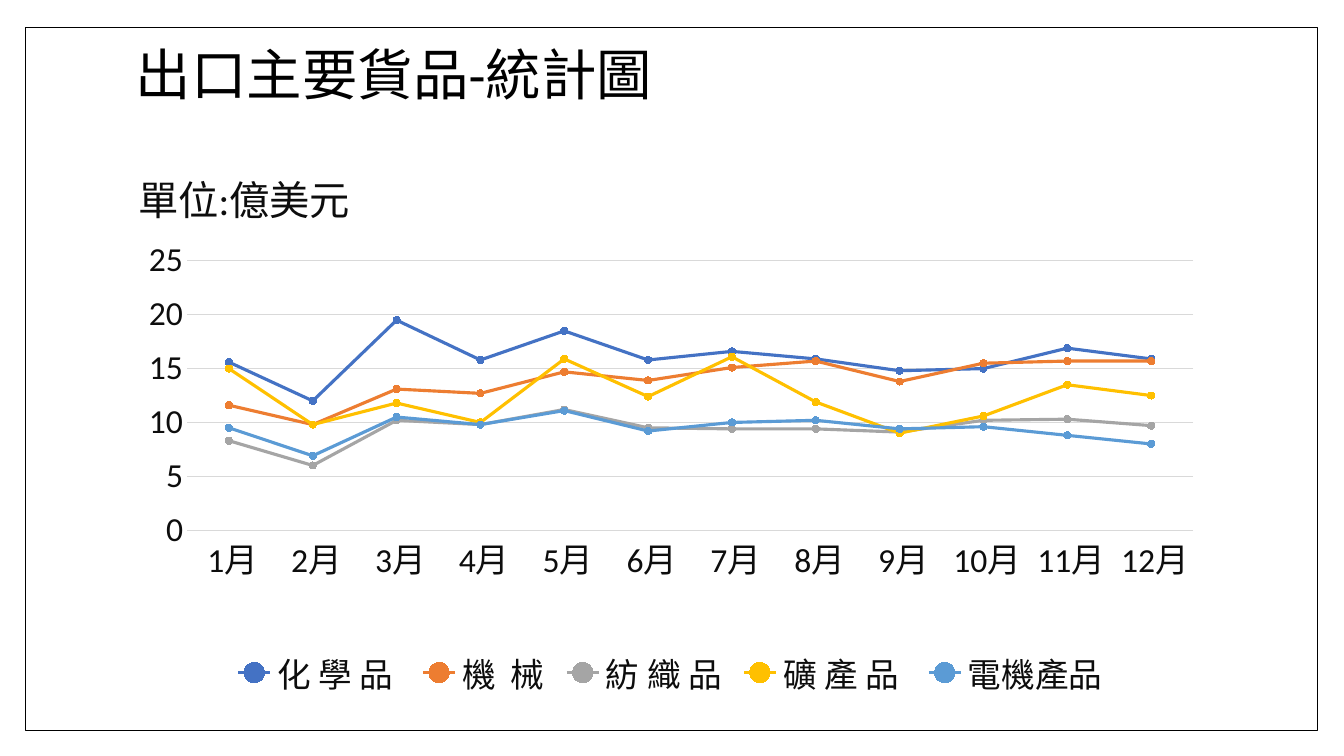
from lxml.etree import SubElement
from pptx import Presentation
from pptx.chart.data import CategoryChartData as Data
from pptx.dml.color import RGBColor
from pptx.enum.chart import (XL_CHART_TYPE as Kind, XL_LEGEND_POSITION as Place,
                             XL_MARKER_STYLE as Mark, XL_TICK_MARK as Tick)
from pptx.enum.shapes import MSO_SHAPE as Shape
from pptx.enum.text import MSO_ANCHOR as Anchor
from pptx.oxml.ns import qn
from pptx.util import Inches, Pt

BLACK = RGBColor(0x00, 0x00, 0x00)
WHITE = RGBColor(0xFF, 0xFF, 0xFF)
INK = RGBColor(0x0D, 0x0D, 0x0D)
GRID = RGBColor(0xD9, 0xD9, 0xD9)
BLUE = RGBColor(0x44, 0x72, 0xC4)
ORANGE = RGBColor(0xED, 0x7D, 0x31)
GRAY = RGBColor(0xA5, 0xA5, 0xA5)
GOLD = RGBColor(0xFF, 0xC0, 0x00)
SKY = RGBColor(0x5B, 0x9B, 0xD5)

MONTHS = [f" {month}月" for month in range(1, 13)]
GOODS = [
    ("化 學 品 ", BLUE, [15.6, 12, 19.5, 15.8, 18.5, 15.8, 16.6, 15.9, 14.8, 15, 16.9, 15.9]),
    ("機  械", ORANGE, [11.6, 9.8, 13.1, 12.7, 14.7, 13.9, 15.1, 15.7, 13.8, 15.5, 15.7, 15.7]),
    ("紡 織 品", GRAY, [8.3, 6, 10.2, 9.8, 11.2, 9.5, 9.4, 9.4, 9.1, 10.2, 10.3, 9.7]),
    ("礦 產 品 ", GOLD, [15, 9.8, 11.8, 10, 15.9, 12.4, 16.1, 11.9, 9, 10.6, 13.5, 12.5]),
    ("電機產品", SKY, [9.5, 6.9, 10.5, 9.8, 11.1, 9.2, 10, 10.2, 9.4, 9.6, 8.8, 8]),
]


def arrange(node, index, **values):
    """Give a chart part a manual layout, in fractions of the chart."""
    for old in node.findall(qn("c:layout")):
        node.remove(old)
    layout = SubElement(node, qn("c:layout"))
    node.insert(index, layout)
    manual = SubElement(layout, qn("c:manualLayout"))
    for name, value in values.items():
        SubElement(manual, qn(f"c:{name}")).set("val", str(value))


class Board:
    face = "Calibri"

    def __init__(self, slide):
        self.slide = slide

    def style(self, font, size, color=INK):
        for name, value in {"name": self.face, "size": Pt(size), "bold": False}.items():
            setattr(font, name, value)
        font.color.rgb = color

    def stroke(self, line, color, width):
        line.color.rgb = color
        line.width = Pt(width)

    def frame(self, *box):
        rect = self.slide.shapes.add_shape(Shape.RECTANGLE, *map(Inches, box))
        rect.shadow.inherit = False
        rect.fill.solid()
        rect.fill.fore_color.rgb = WHITE
        self.stroke(rect.line, BLACK, 1)

    def text(self, words, size, *box):
        frame = self.slide.shapes.add_textbox(*map(Inches, box)).text_frame
        frame.word_wrap = True
        frame.vertical_anchor = Anchor.MIDDLE
        para = frame.paragraphs[0]
        para.line_spacing = 0.9
        run = para.add_run()
        run.text = words
        self.style(run.font, size, BLACK)

    def chart(self, title, months, goods, *box):
        data = Data()
        data.categories = months
        for name, _, values in goods:
            data.add_series(name, values)
        chart = self.slide.shapes.add_chart(
            Kind.LINE_MARKERS, *map(Inches, box), data).chart
        self.style(chart.font, 24)
        self.head(chart, title)
        self.axes(chart)
        self.lines(chart.plots[0], goods)
        chart.has_legend = True
        chart.legend.position = Place.BOTTOM
        chart.legend.include_in_layout = False
        self.style(chart.legend.font, 24)
        arrange(chart._chartSpace.chart.plotArea, 0, layoutTarget="inner",
                xMode="edge", yMode="edge", x=0.056, y=0.206, w=0.924, h=0.483)

    def head(self, chart, words):
        chart.has_title = True
        title = chart.chart_title
        run = title.text_frame.paragraphs[0].add_run()
        run.text = words
        self.style(run.font, 28.8)
        title.include_in_layout = False
        arrange(title._element, 1, xMode="edge", yMode="edge", x=0.005, y=0.02)

    def axes(self, chart):
        for axis in (chart.category_axis, chart.value_axis):
            axis.major_tick_mark = axis.minor_tick_mark = Tick.NONE
            self.style(axis.tick_labels.font, 24)
        self.stroke(chart.category_axis.format.line, GRID, 0.75)
        axis = chart.value_axis
        for name, value in {"minimum_scale": 0, "maximum_scale": 25, "major_unit": 5}.items():
            setattr(axis, name, value)
        axis.format.line.fill.background()
        self.stroke(axis.major_gridlines.format.line, GRID, 0.75)

    def lines(self, plot, goods):
        plot.vary_by_categories = False
        for series, (_, color, _) in zip(plot.series, goods):
            series.smooth = False
            self.stroke(series.format.line, color, 2.25)
            mark = series.marker
            mark.style, mark.size = Mark.CIRCLE, 5
            mark.format.fill.solid()
            mark.format.fill.fore_color.rgb = color
            self.stroke(mark.format.line, color, 0.75)


def main():
    deck = Presentation()
    deck.slide_width, deck.slide_height = Inches(13.33), Inches(7.5)
    board = Board(deck.slides.add_slide(deck.slide_layouts[6]))
    board.frame(0.25, 0.27, 12.82, 6.98)
    board.text("出口主要貨品-統計圖", 39.6, 1.25, 0.41, 10.8, 0.72)
    board.chart("單位:億美元", MONTHS, GOODS, 1.25, 1.45, 10.8, 5.53)
    deck.save("out.pptx")


if __name__ == "__main__":
    main()
